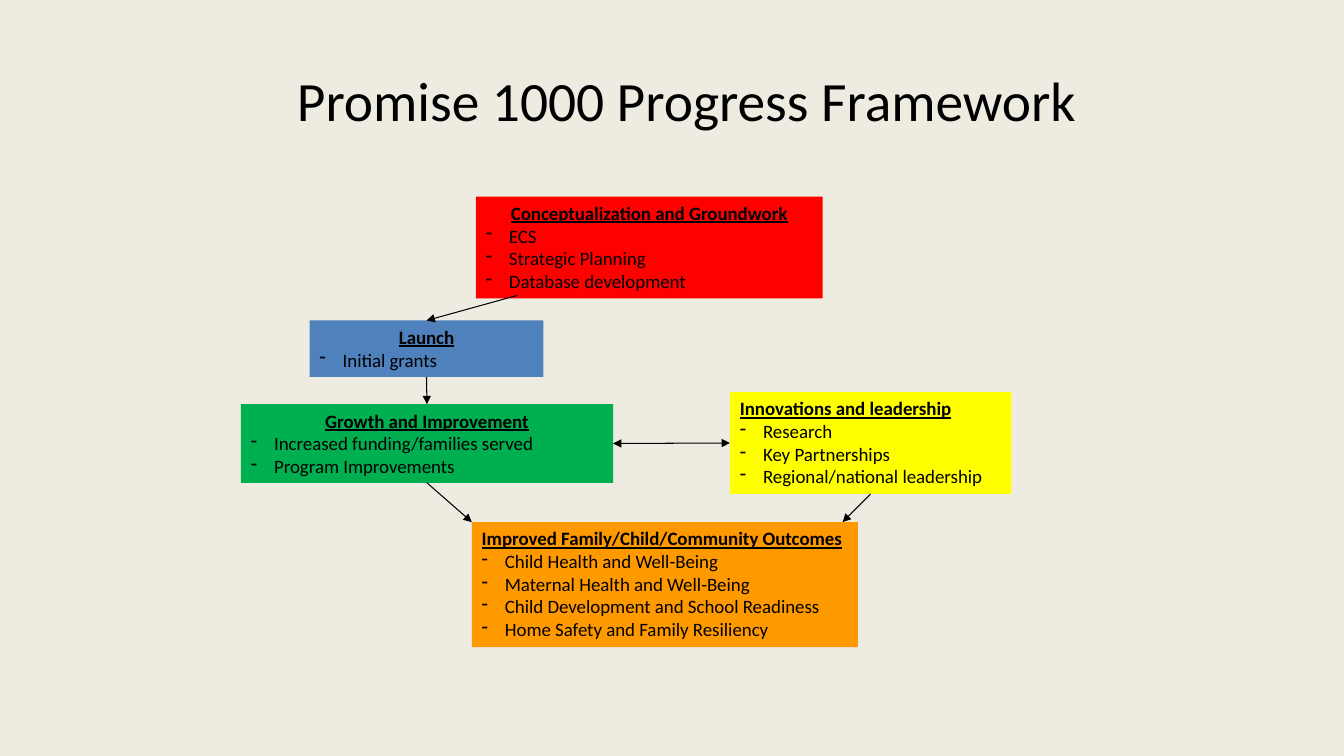
from lxml import etree
from pptx import Presentation
from pptx.dml.color import RGBColor
from pptx.enum.shapes import MSO_CONNECTOR, MSO_SHAPE
from pptx.enum.text import MSO_ANCHOR, PP_ALIGN
from pptx.oxml.ns import qn
from pptx.util import Inches, Pt

RECTANGLE = MSO_SHAPE.RECTANGLE
STRAIGHT = MSO_CONNECTOR.STRAIGHT
MIDDLE, TOP = MSO_ANCHOR.MIDDLE, MSO_ANCHOR.TOP
CENTER, LEFT = PP_ALIGN.CENTER, PP_ALIGN.LEFT

BLACK = RGBColor(0x00, 0x00, 0x00)
CREAM = RGBColor(0xEE, 0xEC, 0xE1)
RED = RGBColor(0xFF, 0x00, 0x00)
BLUE = RGBColor(0x4F, 0x81, 0xBD)
GREEN = RGBColor(0x00, 0xB0, 0x50)
YELLOW = RGBColor(0xFF, 0xFF, 0x00)
ORANGE = RGBColor(0xFF, 0x99, 0x00)

FONT = "Calibri"
TITLE = "Promise 1000 Progress Framework"
TITLE_AREA = (2.5, 0.44, 8.62, 1.09)
BULLET_INDENT = 0.23

STAGES = {
    "groundwork": ((4.72, 1.95, 3.44, 1.01), RED, CENTER, True,
                   "Conceptualization and Groundwork",
                   ["ECS", "Strategic Planning", "Database development"]),
    "launch": ((3.07, 3.18, 2.32, 0.56), BLUE, CENTER, True,
               "Launch", ["Initial grants"]),
    "growth": ((2.39, 4.01, 3.69, 0.78), GREEN, CENTER, True,
               "Growth and Improvement",
               ["Increased funding/families served", "Program Improvements"]),
    "innovations": ((7.24, 3.89, 2.79, 1.01), YELLOW, LEFT, True,
                    "Innovations and leadership",
                    ["Research", "Key Partnerships", "Regional/national leadership"]),
    "outcomes": ((4.68, 5.18, 3.83, 1.24), ORANGE, LEFT, False,
                 "Improved Family/Child/Community Outcomes",
                 ["Child Health and Well-Being", "Maternal Health and Well-Being",
                  "Child Development and School Readiness",
                  "Home Safety and Family Resiliency"]),
}

TOP_MIDDLE, BOTTOM_MIDDLE = (0.5, 0), (0.5, 1)
LEFT_MIDDLE, RIGHT_MIDDLE = (0, 0.5), (1, 0.5)
ARROWS = [
    ("groundwork", (0.12, 0.97), "launch", TOP_MIDDLE, ["tailEnd"]),
    ("launch", BOTTOM_MIDDLE, "growth", TOP_MIDDLE, ["tailEnd"]),
    ("growth", RIGHT_MIDDLE, "innovations", LEFT_MIDDLE, ["headEnd", "tailEnd"]),
    ("growth", BOTTOM_MIDDLE, "outcomes", (0, 0), ["tailEnd"]),
    ("innovations", BOTTOM_MIDDLE, "outcomes", (0.96, 0), ["tailEnd"]),
]


def style(paragraph, size, heading=False):
    paragraph.font.name = FONT
    paragraph.font.size = Pt(size)
    paragraph.font.color.rgb = BLACK
    paragraph.font.bold = heading
    paragraph.font.underline = heading


def add_title(page):
    box = page.shapes.add_textbox(*map(Inches, TITLE_AREA))
    frame = box.text_frame
    frame.word_wrap = True
    frame.vertical_anchor = MIDDLE
    para = frame.paragraphs[0]
    para.text = TITLE
    para.alignment = CENTER
    style(para, 39.6)


def add_stage(page, area, color, alignment, wraps, heading, items):
    box = page.shapes.add_shape(RECTANGLE, *map(Inches, area))
    box.shadow.inherit = False
    box.fill.solid()
    box.fill.fore_color.rgb = color
    box.line.fill.background()
    frame = box.text_frame
    frame.word_wrap = wraps
    frame.vertical_anchor = TOP
    para = frame.paragraphs[0]
    para.text = heading
    para.alignment = alignment
    style(para, 13.5, heading=True)
    for item in items:
        para = frame.add_paragraph()
        para.text = item
        para.alignment = LEFT
        properties = para._p.get_or_add_pPr()
        properties.set("marL", str(Inches(BULLET_INDENT)))
        properties.set("indent", str(-Inches(BULLET_INDENT)))
        etree.SubElement(properties, qn("a:buChar"), char="-")
        style(para, 13.5)


def anchor(stage, fraction):
    left, top, width, height = STAGES[stage][0]
    return Inches(left + fraction[0] * width), Inches(top + fraction[1] * height)


def add_arrow(page, source, source_point, target, target_point, ends):
    arrow = page.shapes.add_connector(
        STRAIGHT, *anchor(source, source_point), *anchor(target, target_point))
    arrow.line.color.rgb = BLACK
    arrow.line.width = Pt(0.75)
    for end in ends:
        etree.SubElement(arrow.line._get_or_add_ln(), qn("a:" + end), type="triangle")
    etree.SubElement(arrow._element.spPr, qn("a:effectLst"))


def main():
    deck = Presentation()
    deck.slide_width, deck.slide_height = Inches(13.33), Inches(7.5)
    page = deck.slides.add_slide(deck.slide_layouts[6])
    page.background.fill.solid()
    page.background.fill.fore_color.rgb = CREAM
    add_title(page)
    for stage in STAGES.values():
        add_stage(page, *stage)
    for arrow in ARROWS:
        add_arrow(page, *arrow)
    deck.save("out.pptx")


if __name__ == "__main__":
    main()
